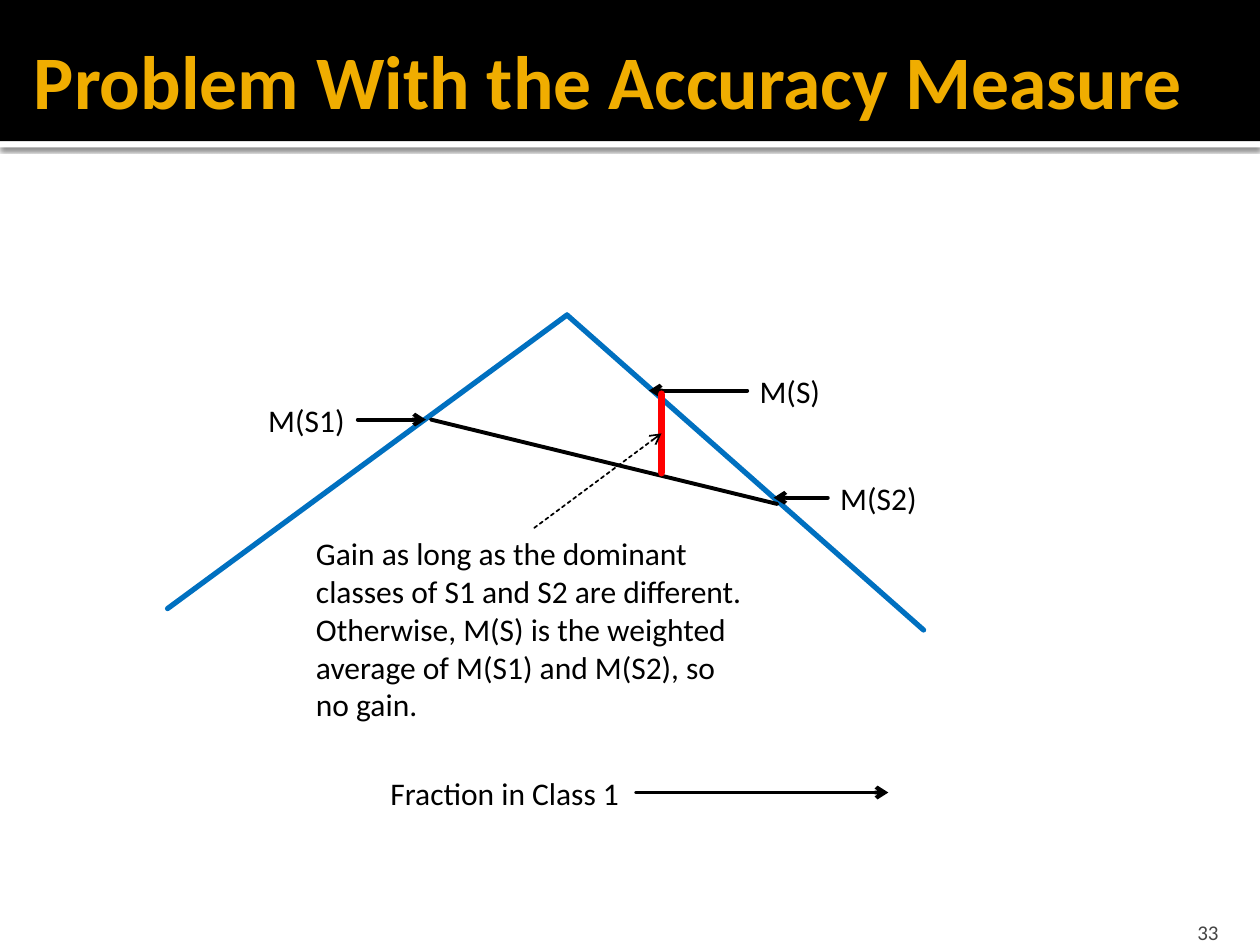
from collections import namedtuple
from dataclasses import dataclass

from lxml.etree import SubElement
from pptx import Presentation
from pptx.dml.color import RGBColor
from pptx.enum.dml import MSO_LINE
from pptx.enum.shapes import MSO_CONNECTOR, MSO_SHAPE
from pptx.enum.text import MSO_ANCHOR, MSO_AUTO_SIZE, PP_ALIGN
from pptx.oxml.ns import qn
from pptx.util import Pt

PX = 9144
Box = namedtuple("Box", "left top width height")


@dataclass(frozen=True)
class Theme:
    """Colours, font and type sizes of the slide."""
    font: str = "Calibri"
    ink: str = "000000"
    paper: str = "FFFFFF"
    gold: str = "F0AD00"
    grey: str = "454545"
    curve: str = "0070C0"
    gain: str = "FF0000"
    title_size: float = 43.2
    body_size: float = 18
    number_size: float = 12


THEME = Theme()


def px(length):
    """Turn px into EMU."""
    return round(length * PX)


def inside(box, left, top, width, height):
    """Return a box placed relative to the corner of another."""
    return Box(box.left + left, box.top + top, width, height)


def add_text(shapes, box, text, *, size=THEME.body_size, color=THEME.ink, bold=False,
             align=PP_ALIGN.LEFT, anchor=MSO_ANCHOR.TOP, wrap=False, insets=(10, 5, 10, 5)):
    """Write text in a box, one paragraph per line."""
    frame = shapes.add_textbox(*map(px, box)).text_frame
    frame.word_wrap = wrap
    frame.auto_size = MSO_AUTO_SIZE.NONE if wrap else MSO_AUTO_SIZE.SHAPE_TO_FIT_TEXT
    frame.vertical_anchor = anchor
    frame.margin_left, frame.margin_top, frame.margin_right, frame.margin_bottom = map(px, insets)
    frame.text = text
    for paragraph in frame.paragraphs:
        paragraph.alignment = align
        font = paragraph.runs[0].font
        font.name, font.size, font.bold = THEME.font, Pt(size), bold
        font.color.rgb = RGBColor.from_string(color)


def add_line(shapes, box, start, end, *, color=THEME.ink, width=2.25, arrow=False, dash=None):
    """Draw a straight line between two points of a box."""
    ends = (box.left + start[0], box.top + start[1], box.left + end[0], box.top + end[1])
    connector = shapes.add_connector(MSO_CONNECTOR.STRAIGHT, *map(px, ends))
    line = connector.line
    line.color.rgb = RGBColor.from_string(color)
    line.width = Pt(width)
    if dash:
        line.dash_style = dash
    outline = line._get_or_add_ln()
    outline.set("cap", "rnd")
    if arrow:
        SubElement(outline, qn("a:tailEnd"), type="arrow")
    SubElement(connector._element.spPr, qn("a:effectLst"))


def add_bar(shapes, box, color):
    """Draw a plain filled rectangle and return it."""
    bar = shapes.add_shape(MSO_SHAPE.RECTANGLE, *map(px, box))
    bar.shadow.inherit = False
    bar.fill.solid()
    bar.fill.fore_color.rgb = RGBColor.from_string(color)
    bar.line.fill.background()
    return bar


def add_shadow(shape):
    """Give a shape a soft shadow below its edge."""
    effects = shape._element.spPr.find(qn("a:effectLst"))
    shadow = SubElement(effects, qn("a:outerShdw"), blurRad=str(Pt(2.5)), dist=str(Pt(0.8)),
                        dir="5400000", algn="tl", rotWithShape="0")
    color = SubElement(shadow, qn("a:srgbClr"), val=THEME.ink)
    SubElement(color, qn("a:alpha"), val="60000")


def title_band(shapes, box, title):
    """Place the black band, its white edge and the title."""
    add_shadow(add_bar(shapes, inside(box, 0, box.height, box.width, 5), THEME.paper))
    add_bar(shapes, box, THEME.ink)
    add_text(shapes, inside(box, 17, 17, box.width - 17, 92), title, size=THEME.title_size,
             color=THEME.gold, bold=True, anchor=MSO_ANCHOR.MIDDLE, wrap=True,
             insets=(10, 5, 5, 5))


def labelled_arrow(shapes, box, label, tail, head):
    """Group a label with an arrow that runs along its middle."""
    group = shapes.add_group_shape().shapes
    add_text(group, box, label)
    add_line(group, box, (tail, 20), (head, 20), arrow=True)


def accuracy_diagram(shapes, box):
    """Draw the accuracy curve, its chord, the gain and the labels."""
    peak = (317, 0)
    for foot in ((0, 233), (600, 250)):
        add_line(shapes, box, foot, peak, color=THEME.curve, width=3)
    add_line(shapes, box, (209, 83), (484, 150))

    for label, left, top, width, tail, head in (
        ("Fraction in Class 1", 167, 359, 205, 205, 405),
        ("M(S1)", 70, 63, 81, 81, 135),
        ("M(S)", 460, 40, 69, 0, -78),
        ("M(S2)", 524, 125, 82, 0, -43),
    ):
        labelled_arrow(shapes, inside(box, left, top, width, 40), label, tail, head)

    add_text(shapes, inside(box, 108, 169, 366, 162),
             "Gain as long as the dominant\n"
             "classes of S1 and S2 are different.\n"
             "Otherwise, M(S) is the weighted\n"
             "average of M(S1) and M(S2), so\n"
             "no gain.")
    add_line(shapes, box, (392, 63), (392, 125), color=THEME.gain, width=4.5)
    add_line(shapes, box, (291, 169), (392, 94), width=1, arrow=True, dash=MSO_LINE.SQUARE_DOT)


def page_number(shapes, box, number):
    """Place the page number at the lower right."""
    add_text(shapes, box, number, size=THEME.number_size, color=THEME.grey,
             align=PP_ALIGN.RIGHT, anchor=MSO_ANCHOR.BOTTOM, wrap=True, insets=(10, 5, 10, 0))


def main():
    """Build the slide and save it."""
    deck = Presentation()
    deck.slide_width, deck.slide_height = px(1000), px(750)
    shapes = deck.slides.add_slide(deck.slide_layouts[6]).shapes
    title_band(shapes, Box(0, 0, 1000, 112), "Problem With the Accuracy Measure")
    page_number(shapes, Box(897, 720, 80, 30), "33")
    accuracy_diagram(shapes, Box(133, 250, 600, 400))
    deck.save("out.pptx")


if __name__ == "__main__":
    main()
